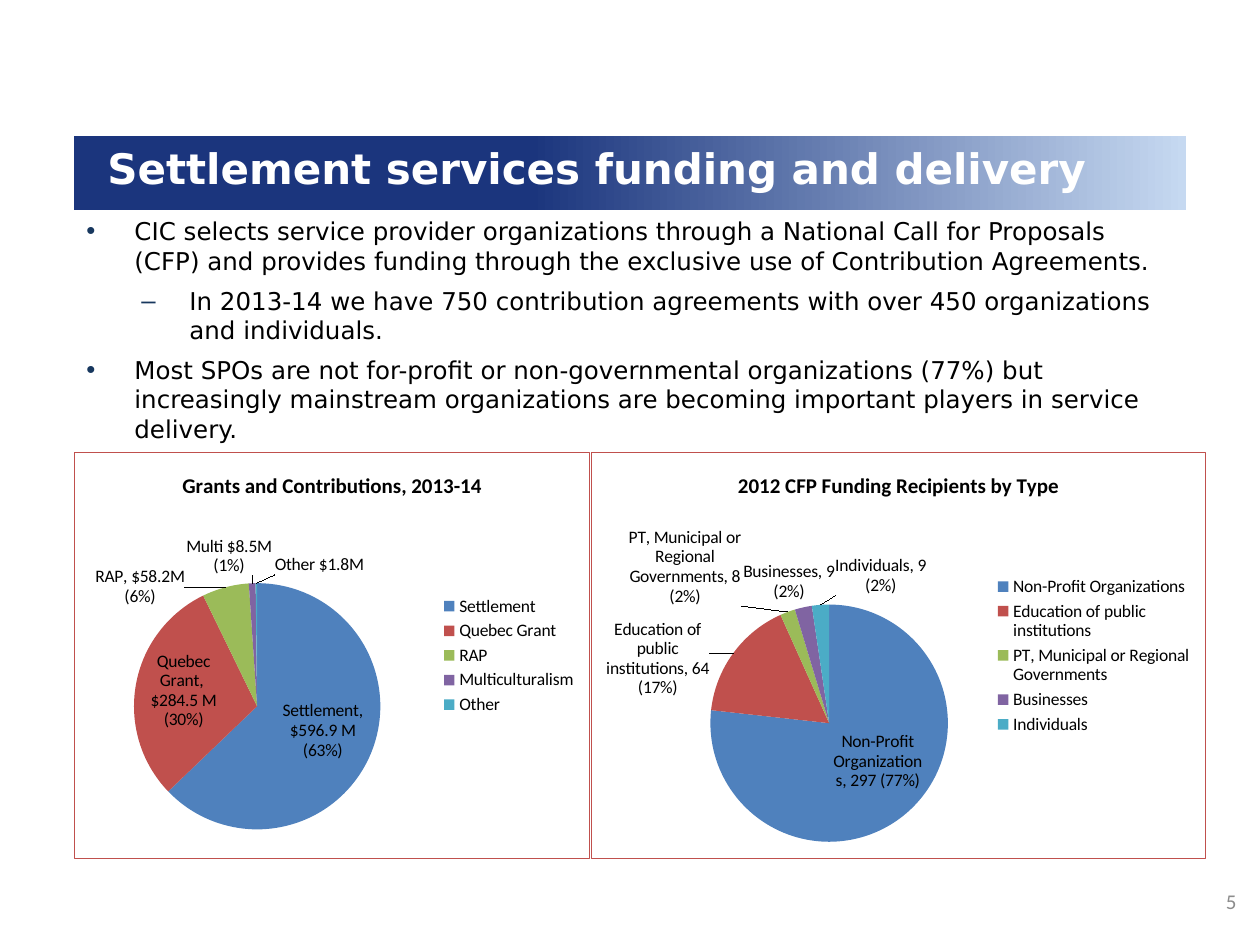
from lxml import etree
from pptx import Presentation
from pptx.chart.data import CategoryChartData
from pptx.dml.color import RGBColor
from pptx.enum.chart import XL_CHART_TYPE, XL_LABEL_POSITION, XL_LEGEND_POSITION
from pptx.enum.shapes import MSO_SHAPE
from pptx.enum.text import MSO_ANCHOR, PP_ALIGN
from pptx.oxml import parse_xml
from pptx.oxml.ns import nsdecls, qn
from pptx.util import Emu, Pt

PX = 914400 / 126
SLICE_COLORS = ["4F81BD", "C0504D", "9BBB59", "8064A2", "4BACC6"]


def style(font, size, color="000000", name="DejaVu Sans", bold=False):
    font.size = Pt(size)
    font.color.rgb = RGBColor.from_string(color)
    font.name = name
    font.bold = bold


def manual_layout(box, x, y, width=None, height=None):
    """Return a layout in a chart box: a label offset, or an inner plot area if sized."""
    values = [("x", x / box[2]), ("y", y / box[3])]
    if width:
        values = [("layoutTarget", "inner"), ("xMode", "edge"), ("yMode", "edge"),
                  *values, ("w", width / box[2]), ("h", height / box[3])]
    items = "".join(f'<c:{tag} val="{value}"/>' for tag, value in values)
    return parse_xml(f'<c:layout {nsdecls("c")}><c:manualLayout>{items}'
                     '</c:manualLayout></c:layout>')


presentation = Presentation()
presentation.slide_width = Emu(round(1260 * PX))
presentation.slide_height = Emu(round(945 * PX))
slide = presentation.slides.add_slide(presentation.slide_layouts[6])

# Title band
band = slide.shapes.add_shape(
    MSO_SHAPE.RECTANGLE, *(Emu(round(n * PX)) for n in (74, 136, 1112, 74)))
band.shadow.inherit = False
band.line.fill.background()
band.fill.gradient()
band.fill.gradient_angle = 0
for stop, position, color in zip(band.fill.gradient_stops, (0.41, 1), ("1B357D", "C6D9F1")):
    stop.position = position
    stop.color.rgb = RGBColor.from_string(color)

# Title, body and slide number
text_frames = []
for box in [(95, 126, 1103, 84), (74, 210, 1101, 223), (1134, 876, 115, 50)]:
    text_box = slide.shapes.add_textbox(*(Emu(round(n * PX)) for n in box))
    text_box.text_frame.word_wrap = True
    text_frames.append(text_box.text_frame)
title, body, number = text_frames

title.vertical_anchor = number.vertical_anchor = MSO_ANCHOR.MIDDLE
run = title.paragraphs[0].add_run()
run.text = "Settlement services funding and delivery"
style(run.font, 24, "FFFFFF", bold=True)

number.paragraphs[0].alignment = PP_ALIGN.RIGHT
run = number.paragraphs[0].add_run()
run.text = "5"
style(run.font, 12, "8C8C8C", "Calibri")

bullets = [
    ("•", 48, "CIC selects service provider organizations through a National Call for Proposals "
     "(CFP) and provides funding through the exclusive use of Contribution Agreements."),
    ("–", 103, "In 2013-14 we have 750 contribution agreements with over 450 organizations "
     "and individuals."),
    ("•", 48, "Most SPOs are not for-profit or non-governmental organizations (77%) but "
     "increasingly mainstream organizations are becoming important players in service delivery."),
]
for index, (mark, indent, text) in enumerate(bullets):
    paragraph = body.paragraphs[0] if index == 0 else body.add_paragraph()
    properties = paragraph._p.get_or_add_pPr()
    properties.set("marL", str(round(indent * PX)))
    properties.set("indent", str(round(-48 * PX)))
    properties.set("lvl", "1" if mark == "–" else "0")
    color = etree.SubElement(properties, qn("a:buClr"))
    etree.SubElement(color, qn("a:srgbClr"), val="17375E")
    etree.SubElement(properties, qn("a:buSzPct"), val="105000")
    etree.SubElement(properties, qn("a:buFont"), typeface="Arial")
    etree.SubElement(properties, qn("a:buChar"), char=mark)
    if index:
        paragraph.space_before = Pt(6)
    run = paragraph.add_run()
    run.text = text
    style(run.font, 14)

# Pie charts: each slice has category, value, label text, side and label offset
CENTER, OUTSIDE = XL_LABEL_POSITION.CENTER, XL_LABEL_POSITION.OUTSIDE_END
pies = [
    ("Grants and Contributions, 2013-14", (74, 452, 516, 407), (59, 131, 248, 247), "0.0", [
        ("Settlement", 596.9, "Settlement, $596.9 M\n(63%)", CENTER, 9, 0),
        ("Quebec Grant", 284.5, "Quebec Grant, \n$284.5 M\n(30%)", CENTER, -13, -5),
        ("RAP", 58.2, "RAP, $58.2M (6%)", OUTSIDE, -39, 26),
        ("Multiculturalism", 8.5, "Multi $8.5M (1%)", OUTSIDE, -23, 0),
        ("Other", 1.8, "Other $1.8M", OUTSIDE, 63, -1),
    ]),
    ("2012 CFP Funding Recipients by Type", (591, 452, 615, 407), (119, 136, 238, 271), "0", [
        ("Non-Profit Organizations", 297, "Non-Profit Organizations, 297 (77%)", CENTER, 9, -6),
        ("Education of public institutions", 64,
         "Education of public institutions, 64 (17%)", OUTSIDE, -18, 49),
        ("PT, Municipal or Regional Governments", 8,
         "PT, Municipal or Regional Governments, 8 (2%)", OUTSIDE, -44, 1),
        ("Businesses", 9, "Businesses, 9 (2%)", OUTSIDE, 33, 1),
        ("Individuals", 9, "Individuals, 9 (2%)", OUTSIDE, 61, -2),
    ]),
]
for heading, box, plot_area, number_format, slices in pies:
    data = CategoryChartData(number_format=number_format)
    data.categories = [entry[0] for entry in slices]
    data.add_series("Series 1", [entry[1] for entry in slices])
    chart = slide.shapes.add_chart(
        XL_CHART_TYPE.PIE, *(Emu(round(n * PX)) for n in box), data).chart
    style(chart.font, 10, name="Calibri")

    chart.has_title = True
    run = chart.chart_title.text_frame.paragraphs[0].add_run()
    run.text = heading
    style(run.font, 12, name="Calibri", bold=True)
    chart.has_legend = True
    chart.legend.position = XL_LEGEND_POSITION.RIGHT
    chart.legend.include_in_layout = False

    plot = chart.plots[0]
    plot.vary_by_categories = True
    series = plot.series[0]
    series.data_labels.show_value = True
    series.data_labels.show_category_name = True
    for index, (_, _, text, position, left, top) in enumerate(slices):
        point = series.points[index]
        point.format.fill.solid()
        point.format.fill.fore_color.rgb = RGBColor.from_string(SLICE_COLORS[index])
        label = point.data_label
        label.text_frame.text = text
        label.position = position
        for paragraph in label.text_frame.paragraphs:
            for run in paragraph.runs:
                style(run.font, 10, name="Calibri")
        label_xml = series._element.findall(".//" + qn("c:dLbl"))[index]
        label_xml.find(qn("c:idx")).addnext(manual_layout(box, left, top))
        label_xml.find(qn("c:showCatName")).set("val", "1")

    chart_xml = chart._chartSpace.find(qn("c:chart"))
    plot_xml = chart_xml.find(qn("c:plotArea"))
    for layout in plot_xml.findall(qn("c:layout")):
        plot_xml.remove(layout)
    plot_xml.insert(0, manual_layout(box, *plot_area))
    chart_xml.addnext(parse_xml(
        f'<c:spPr {nsdecls("c", "a")}><a:noFill/><a:ln w="9525"><a:solidFill>'
        '<a:srgbClr val="C0504D"/></a:solidFill></a:ln></c:spPr>'))

presentation.save("out.pptx")
